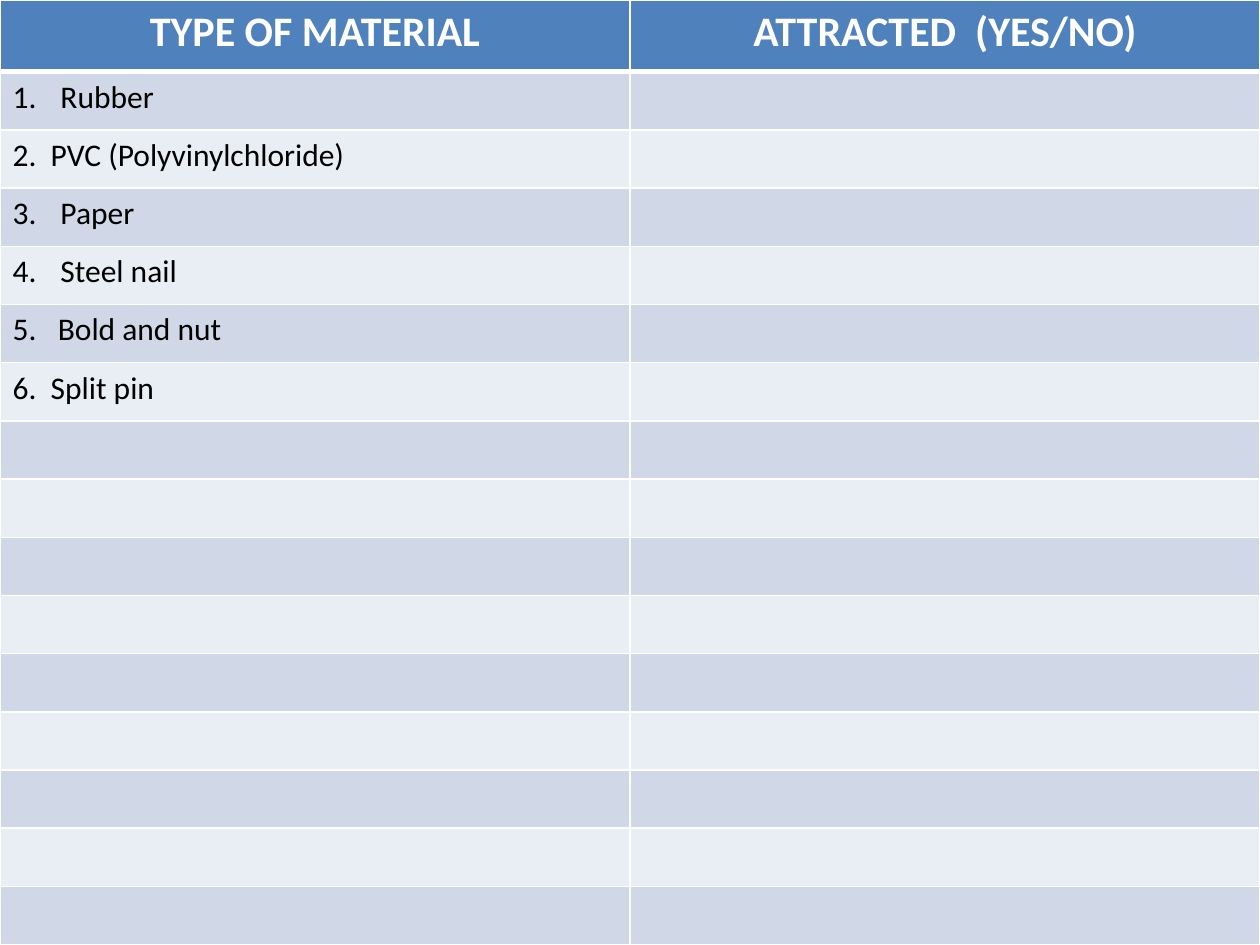
from lxml.etree import SubElement as Sub
from pptx import Presentation as Deck
from pptx.dml.color import RGBColor as RGB
from pptx.enum.text import PP_ALIGN as Align
from pptx.oxml import parse_xml
from pptx.oxml.ns import nsdecls, qn
from pptx.util import Inches, Pt

HUES = {"head": "4F81BD", "odd": "D0D8E8", "even": "E9EDF4", "line": "FFFFFF", "text": "000000"}
HEADS = ["TYPE OF MATERIAL", "ATTRACTED  (YES/NO)"]
ITEMS = [
    ("Rubber", 1),
    ("2.  PVC (Polyvinylchloride)", None),
    ("Paper", 3),
    ("Steel nail", 4),
    ("5.   Bold and nut", None),
    ("6.  Split pin", None),
]
ROWS = 15
WIDE, HIGH, TOP = 10, 7.5, 0.57


class Sheet:
    """Style and current slide, with a method for each kind of element."""

    def __init__(self, slide, font="Calibri"):
        self.slide = slide
        self.font = font

    def table(self, heads, items, rows):
        frame = self.slide.shapes.add_table(
            rows + 1, len(heads), 0, 0, Inches(WIDE), Inches(HIGH))
        grid = frame.table
        for col in grid.columns:
            col.width = Inches(WIDE / len(heads))
        for num, row in enumerate(grid.rows):
            row.height = Inches((HIGH - TOP) / rows if num else TOP)
            hue = ("odd" if num % 2 else "even") if num else "head"
            for cell in row.cells:
                self.paint(cell, hue, top=3 if num == 1 else 1, base=1 if num else 3)
        for col, text in enumerate(heads):
            para = self.label(grid.cell(0, col), text, 24, "line", True)
            para.alignment = Align.CENTER
        for num, (text, start) in enumerate(items, 1):
            para = self.label(grid.cell(num, 0), text, 18, "text", False)
            if start:
                self.number(para, start)

    def paint(self, cell, hue, top, base):
        cell.fill.solid()
        cell.fill.fore_color.rgb = RGB.from_string(HUES[hue])
        sides = {"lnL": 1, "lnR": 1, "lnT": top, "lnB": base}
        for spot, (side, width) in enumerate(sides.items()):
            line = parse_xml(
                f'<a:{side} {nsdecls("a")} w="{Pt(width)}"><a:solidFill>'
                f'<a:srgbClr val="{HUES["line"]}"/></a:solidFill></a:{side}>')
            cell._tc.get_or_add_tcPr().insert(spot, line)

    def label(self, cell, text, size, hue, bold):
        para = cell.text_frame.paragraphs[0]
        para.text = text
        for run in para.runs:
            run.font.name = self.font
            run.font.size = Pt(size)
            run.font.bold = bold
            run.font.color.rgb = RGB.from_string(HUES[hue])
        return para

    def number(self, para, start):
        props = para._p.get_or_add_pPr()
        props.set("marL", str(Inches(0.38)))
        props.set("indent", str(Inches(-0.38)))
        Sub(props, qn("a:buFont"), typeface="+mj-lt")
        Sub(props, qn("a:buAutoNum"), type="arabicPeriod", startAt=str(start))


def main():
    deck = Deck()
    deck.slide_width, deck.slide_height = Inches(WIDE), Inches(HIGH)
    sheet = Sheet(deck.slides.add_slide(deck.slide_layouts[6]))
    sheet.table(HEADS, ITEMS, ROWS)
    deck.save("out.pptx")


if __name__ == "__main__":
    main()
